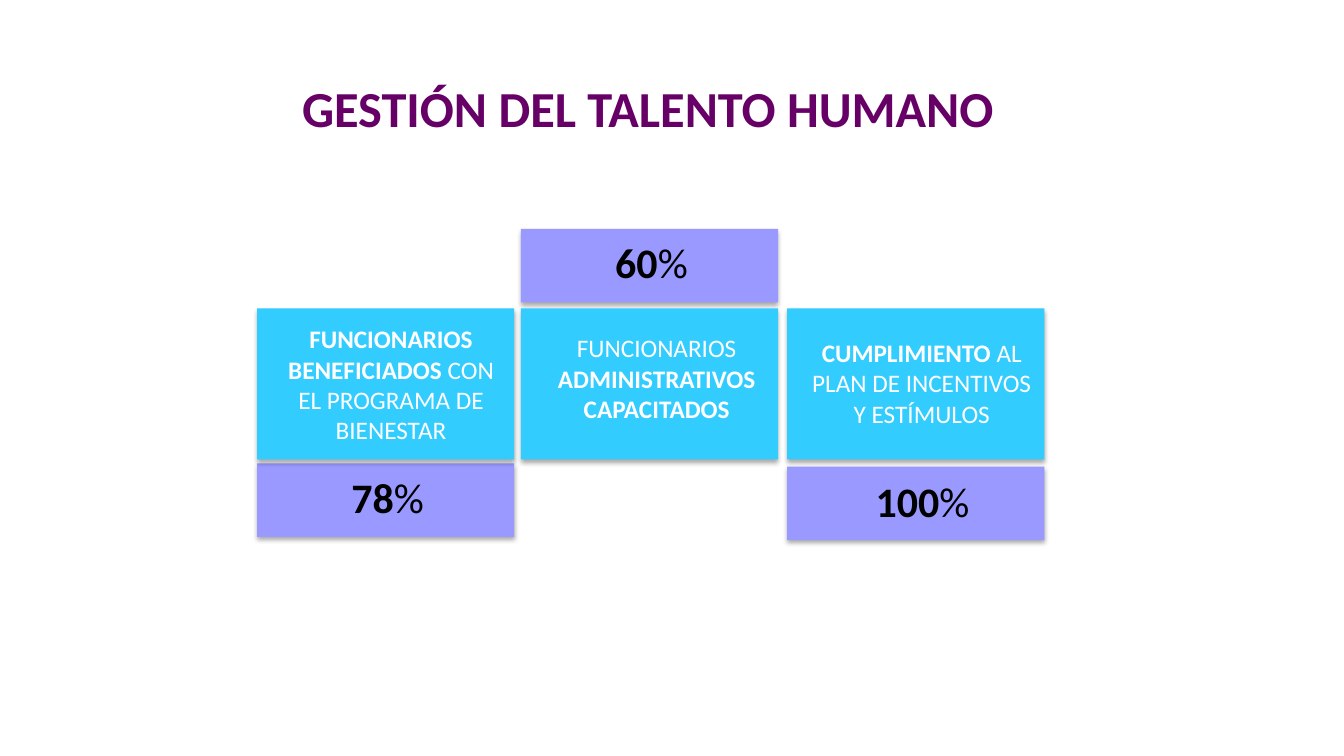
from dataclasses import dataclass

from lxml import etree
from pptx import Presentation
from pptx.dml.color import RGBColor
from pptx.enum import shapes, text
from pptx.oxml import ns
from pptx.util import Cm, Pt

TITLE = "GESTIÓN DEL TALENTO HUMANO"
TITLE_BOX = (7.26, 1.83, 18.14, 1.8)

# Lengths in cm. Caption runs are (words, bold); boxes are left, top, width, height.
INDICATORS = [
    dict(left=6.48, rate="78", rate_top=11.68, rate_box=(8.59, 11.76, 2.36, 1.55),
         caption=[("FUNCIONARIOS BENEFICIADOS ", True),
                  ("CON EL PROGRAMA DE BIENESTAR", False)],
         caption_box=(6.78, 8.03, 6.15, 3.33)),
    dict(left=13.13, rate="60", rate_top=5.77, rate_box=(15.24, 5.84, 2.36, 1.55),
         caption=[("FUNCIONARIOS ", False),
                  ("ADMINISTRATIVOS CAPACITADOS", True)],
         caption_box=(13.59, 8.26, 5.92, 2.57)),
    dict(left=19.84, rate="100", rate_top=11.76, rate_box=(21.79, 11.86, 2.92, 1.55),
         caption=[("CUMPLIMIENTO ", True),
                  ("AL PLAN DE INCENTIVOS Y ESTÍMULOS", False)],
         caption_box=(20.04, 8.38, 6.38, 2.57)),
]
CARD_TOP, CARD_HEIGHT, RATE_HEIGHT, COLUMN_WIDTH = 7.77, 3.81, 1.85, 6.48


@dataclass(frozen=True)
class Theme:
    font: str = "Calibri"
    title: str = "660066"
    card: str = "33CCFF"
    rate: str = "9999FF"
    caption_ink: str = "FFFFFF"
    rate_ink: str = "000000"
    shadow: str = "000000"
    title_size: int = 36
    rate_size: int = 30
    caption_size: int = 18


THEME = Theme()


def add_shadow(shape):
    """Give the shape a soft shadow falling straight down."""
    shape.shadow.inherit = False
    effects = shape._element.spPr.find(ns.qn("a:effectLst"))
    outer = etree.SubElement(effects, ns.qn("a:outerShdw"), blurRad=str(Pt(3.5)),
                             dist=str(Pt(2.2)), dir="5400000", rotWithShape="0")
    color = etree.SubElement(outer, ns.qn("a:srgbClr"), val=THEME.shadow)
    etree.SubElement(color, ns.qn("a:alpha"), val="32000")


def add_block(slide, box, color):
    block = slide.shapes.add_shape(shapes.MSO_SHAPE.RECTANGLE, *map(Cm, box))
    block.fill.solid()
    block.fill.fore_color.rgb = RGBColor.from_string(color)
    block.line.fill.background()
    add_shadow(block)


def add_words(slide, box, runs, size, color, wrap=False):
    frame = slide.shapes.add_textbox(*map(Cm, box)).text_frame
    frame.word_wrap = wrap
    frame.auto_size = text.MSO_AUTO_SIZE.SHAPE_TO_FIT_TEXT
    paragraph = frame.paragraphs[0]
    paragraph.alignment = text.PP_ALIGN.CENTER
    for words, bold in runs:
        run = paragraph.add_run()
        run.text = words
        run.font.name = THEME.font
        run.font.size = Pt(size)
        run.font.bold = bold
        run.font.color.rgb = RGBColor.from_string(color)


def add_indicator(slide, item):
    """Draw one caption card with its percentage block."""
    left = item["left"]
    add_block(slide, (left, item["rate_top"], COLUMN_WIDTH, RATE_HEIGHT), THEME.rate)
    add_block(slide, (left, CARD_TOP, COLUMN_WIDTH, CARD_HEIGHT), THEME.card)
    add_words(slide, item["rate_box"], [(item["rate"], True), ("%", False)],
              THEME.rate_size, THEME.rate_ink)
    add_words(slide, item["caption_box"], item["caption"],
              THEME.caption_size, THEME.caption_ink, wrap=True)


def main():
    deck = Presentation()
    deck.slide_width, deck.slide_height = Cm(33.87), Cm(19.05)
    slide = deck.slides.add_slide(deck.slide_layouts[6])
    add_words(slide, TITLE_BOX, [(TITLE, True)], THEME.title_size, THEME.title)
    for item in INDICATORS:
        add_indicator(slide, item)
    deck.save("out.pptx")


if __name__ == "__main__":
    main()
